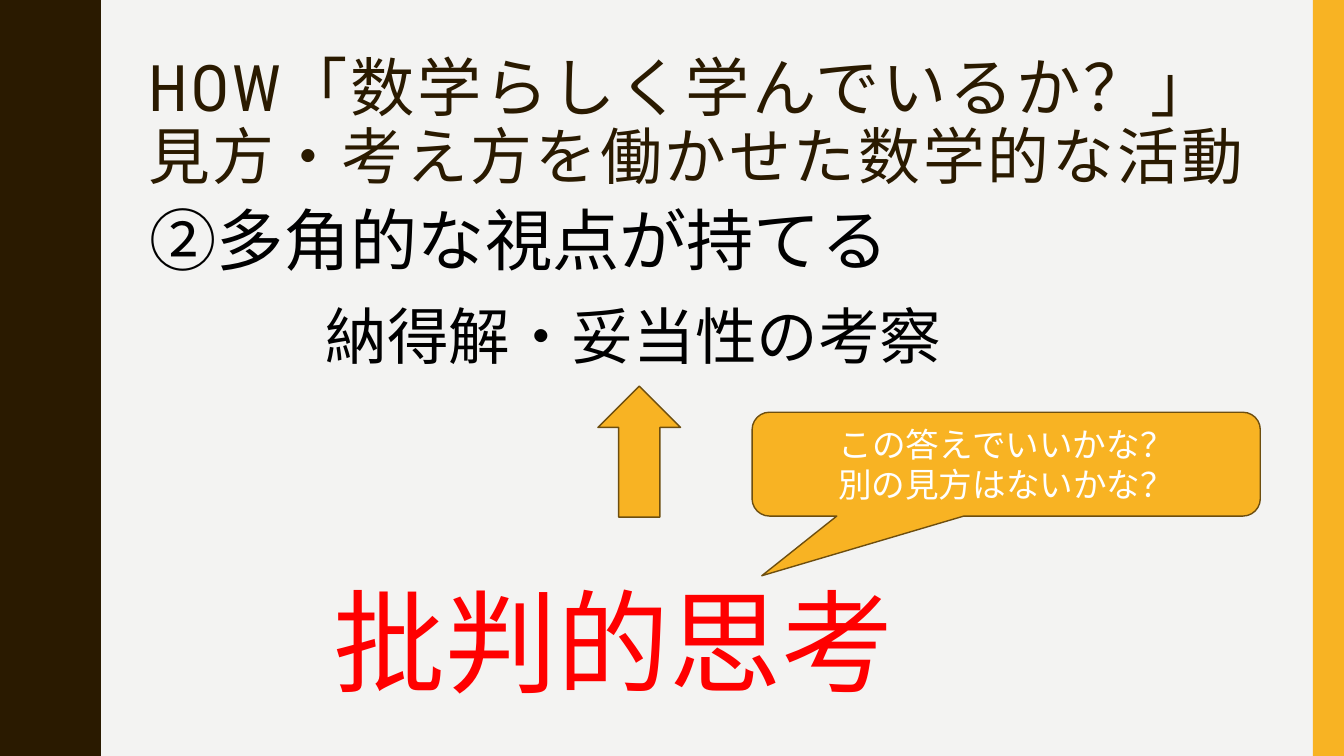
"""Build the slide on critical thinking in mathematics."""
import pptx
import pptx.util
import pptx.dml.color
import pptx.enum.shapes
import pptx.enum.text

Inches = pptx.util.Inches
Pt = pptx.util.Pt
SHAPE = pptx.enum.shapes.MSO_SHAPE
ANCHOR = pptx.enum.text.MSO_ANCHOR
ALIGN = pptx.enum.text.PP_ALIGN

THEME = {
    "paper": "F3F3F2", "dark": "2A1A00", "gold": "F8B323", "edge": "6D4E0F",
    "black": "000000", "red": "FF0000", "white": "FFFFFF",
    "head": "Roboto Condensed", "body": "Noto Sans CJK JP", "note": "Calibri",
    "head_size": (45.9, 44.1), "point_size": 48, "answer_size": 44,
    "key_size": 80, "note_size": 24,
}
WIDE, HIGH = 13.33, 7.5
TITLE = ("HOW「数学らしく学んでいるか？」", "見方・考え方を働かせた数学的な活動")
LINES = [
    ("②多角的な視点が持てる", (1.38, 1.92, 11.12, 0.91), "point_size", "black"),
    ("納得解・妥当性の考察", (3.13, 2.91, 11.28, 0.84), "answer_size", "black"),
    ("批判的思考", (3.21, 5.63, 9.14, 1.45), "key_size", "red"),
]
NOTE = ("この答えでいいかな？", "別の見方はないかな？")
WAVE = [(0.78, 0), (0.78, 0.07), (0.79, 0.14), (0.8, 0.2), (0.81, 0.25),
        (0.83, 0.29), (0.85, 0.33), (0.87, 0.38), (0.89, 0.42), (0.91, 0.46),
        (0.93, 0.5), (0.95, 0.55), (0.96, 0.61), (0.97, 0.68)]
CREST, TROUGH, HALF = 0.97, 0.78, 0.75


def color(name):
    return pptx.dml.color.RGBColor.from_string(THEME[name])


def paint(shape, fill, edge=None):
    shape.shadow.inherit = False
    shape.fill.solid()
    shape.fill.fore_color.rgb = color(fill)
    if edge:
        shape.line.color.rgb = color(edge)
        shape.line.width = Pt(1)
    else:
        shape.line.fill.background()


def style(font, face, size, tint):
    font.name = THEME[face]
    font.size = Pt(size)
    font.color.rgb = color(tint)


def add_box(slide, place):
    frame = slide.shapes.add_textbox(*map(Inches, place)).text_frame
    frame.word_wrap = True
    return frame


def add_shape(slide, kind, place, fill, edge=None):
    shape = slide.shapes.add_shape(kind, *map(Inches, place))
    paint(shape, fill, edge)
    return shape


def add_wave(slide):
    edge = []
    for half in range(round(HIGH / HALF)):
        for x, y in WAVE:
            edge.append((CREST + TROUGH - x if half % 2 else x, half * HALF + y))
    edge += [(TROUGH, HIGH), (0, HIGH)]
    form = slide.shapes.build_freeform(0, 0, scale=Inches(1))
    form.add_line_segments(edge, close=True)
    paint(form.convert_to_shape(), "dark")


def add_title(slide):
    frame = add_box(slide, (1.37, 0.42, 11.13, 1.63))
    frame.vertical_anchor = ANCHOR.MIDDLE
    para = frame.paragraphs[0]
    para.line_spacing = 0.9
    for i, (text, size) in enumerate(zip(TITLE, THEME["head_size"])):
        if i:
            para.add_line_break()
        run = para.add_run()
        run.text = text
        style(run.font, "head", size, "dark")
        run.font._element.set("spc", "200")


def add_note(slide):
    shape = add_shape(slide, SHAPE.ROUNDED_RECTANGULAR_CALLOUT,
                      (7.46, 4.09, 5.04, 1.03), "gold", "edge")
    for i, value in enumerate((-0.481, 1.075, 0.167)):
        shape.adjustments[i] = value
    frame = shape.text_frame
    frame.vertical_anchor = ANCHOR.MIDDLE
    frame.text = "\n".join(NOTE)
    for para in frame.paragraphs:
        para.alignment = ALIGN.CENTER
        style(para.font, "note", THEME["note_size"], "white")


def main():
    deck = pptx.Presentation()
    deck.slide_width, deck.slide_height = Inches(WIDE), Inches(HIGH)
    slide = deck.slides.add_slide(deck.slide_layouts[6])
    slide.background.fill.solid()
    slide.background.fill.fore_color.rgb = color("paper")
    add_wave(slide)
    add_shape(slide, SHAPE.RECTANGLE, (13.02, 0, 0.31, HIGH), "gold")
    add_title(slide)
    for text, place, size, tint in LINES:
        para = add_box(slide, place).paragraphs[0]
        para.text = text
        style(para.font, "body", THEME[size], tint)
    arrow = add_shape(slide, SHAPE.DOWN_ARROW, (5.93, 3.83, 0.82, 1.3), "gold", "edge")
    arrow.rotation = 180
    add_note(slide)
    deck.save("out.pptx")


if __name__ == "__main__":
    main()
